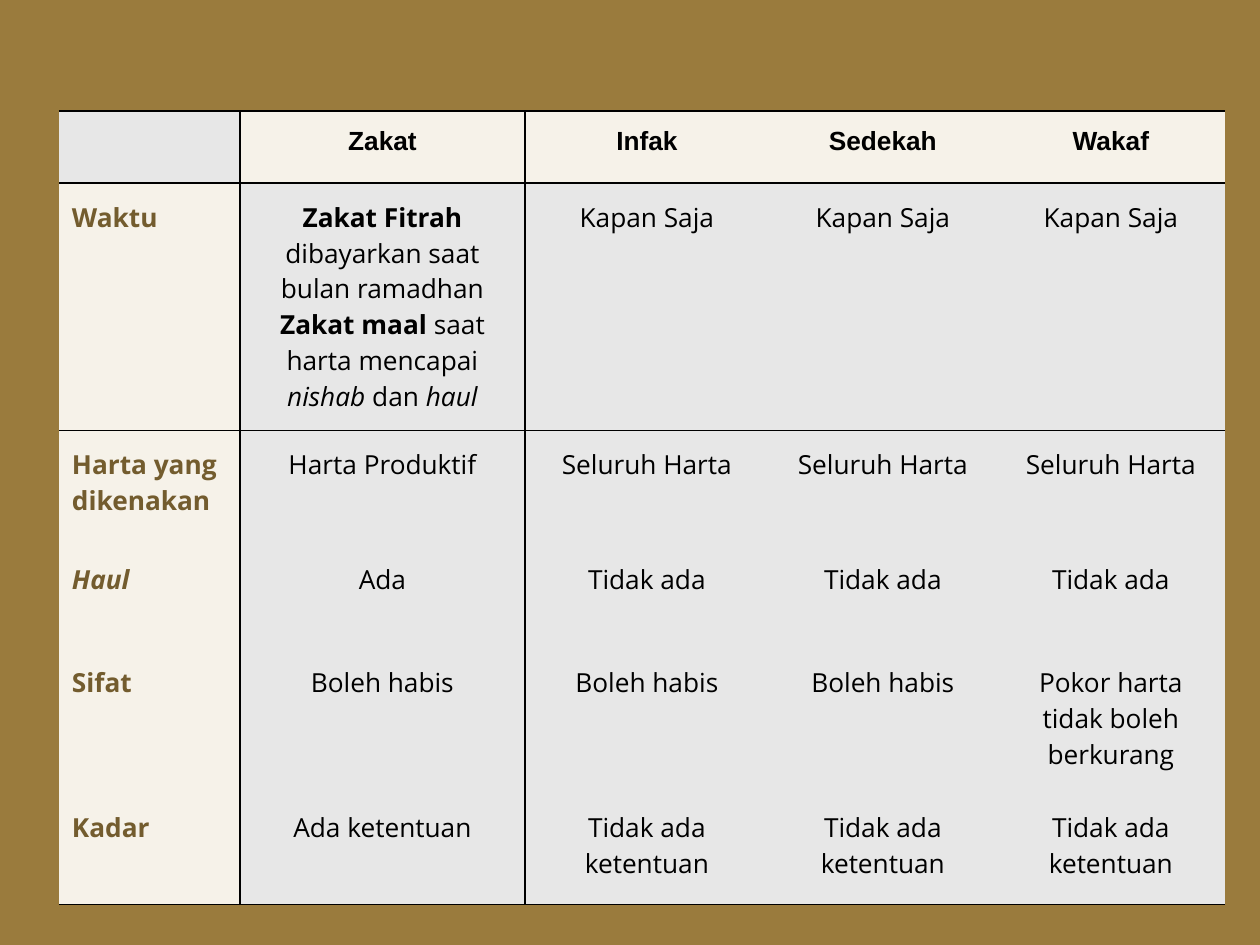
from dataclasses import dataclass
import lxml.etree
import pptx
import pptx.dml.color
import pptx.enum.text
import pptx.oxml
import pptx.oxml.ns
import pptx.util


@dataclass(frozen=True)
class Theme:
    background: str = "9A7B3D"
    cream: str = "F6F2E9"
    grey: str = "E7E7E7"
    brown: str = "735C2E"
    black: str = "000000"
    head_font: str = "Arial"
    body_font: str = "Open Sans"
    size: int = 15
    border: int = 1


@dataclass(frozen=True)
class Run:
    text: str
    bold: bool = False
    italic: bool = False


@dataclass(frozen=True)
class Row:
    height: int
    label: Run
    cells: tuple


THEME = Theme()
LEFT, TOP, WIDTH, HEIGHT = 59, 111, 1166, 769
COLUMNS = (181, 285, 244, 228, 228)
WAKTU_ZAKAT = (
    (Run("Zakat Fitrah ", bold=True), Run("dibayarkan saat bulan ramadhan")),
    (Run("Zakat maal ", bold=True), Run("saat harta mencapai "),
     Run("nishab ", italic=True), Run("dan "), Run("haul", italic=True)),
)


def plain(*texts: str, bold: bool = False) -> tuple:
    return tuple(((Run(text, bold),),) for text in texts)


ROWS = (
    Row(72, Run(""), plain("Zakat", "Infak", "Sedekah", "Wakaf", bold=True)),
    Row(145, Run("Waktu", bold=True), (WAKTU_ZAKAT, *plain(*["Kapan Saja"] * 3))),
    Row(115, Run("Harta yang dikenakan", bold=True),
        plain("Harta Produktif", *["Seluruh Harta"] * 3)),
    Row(103, Run("Haul", bold=True, italic=True), plain("Ada", *["Tidak ada"] * 3)),
    Row(145, Run("Sifat", bold=True),
        plain(*["Boleh habis"] * 3, "Pokor harta tidak boleh berkurang")),
    Row(111, Run("Kadar", bold=True),
        plain("Ada ketentuan", *["Tidak ada ketentuan"] * 3)),
)
RULED_ROWS = (0, 1, 2, len(ROWS))
RULED_COLUMNS = (1, 2)


def px(n: int) -> pptx.util.Emu:
    return pptx.util.Emu(round(n * 914400 / 126))


def rgb(color: str) -> pptx.dml.color.RGBColor:
    return pptx.dml.color.RGBColor.from_string(color)


def write(tf, paragraphs: tuple, *, font: str, color: str, centred: bool) -> None:
    align = pptx.enum.text.PP_ALIGN
    for i, runs in enumerate(paragraphs):
        p = tf.paragraphs[0] if i == 0 else tf.add_paragraph()
        p.alignment = align.CENTER if centred else align.LEFT
        for run in runs:
            r = p.add_run()
            r.text = run.text
            r.font.name = font
            r.font.size = pptx.util.Pt(THEME.size)
            r.font.bold = run.bold
            r.font.italic = run.italic
            r.font.color.rgb = rgb(color)


def set_borders(cell, row: int, col: int) -> None:
    sides = {
        "L": col in RULED_COLUMNS,
        "R": col + 1 in RULED_COLUMNS,
        "T": row in RULED_ROWS,
        "B": row + 1 in RULED_ROWS,
    }
    tcPr = cell._tc.get_or_add_tcPr()
    qn = pptx.oxml.ns.qn
    for i, (side, ruled) in enumerate(sides.items()):
        ln = pptx.oxml.parse_xml(f'<a:ln{side} {pptx.oxml.ns.nsdecls("a")}/>')
        if ruled:
            ln.set("w", str(pptx.util.Pt(THEME.border)))
            fill = lxml.etree.SubElement(ln, qn("a:solidFill"))
            lxml.etree.SubElement(fill, qn("a:srgbClr"), val=THEME.black)
        else:
            lxml.etree.SubElement(ln, qn("a:noFill"))
        tcPr.insert(i, ln)


def draw_cell(cell, row: int, col: int, paragraphs: tuple) -> None:
    cell.margin_left = cell.margin_right = px(13)
    cell.margin_top = cell.margin_bottom = px(16)
    cell.fill.solid()
    heading = (row == 0) != (col == 0)
    cell.fill.fore_color.rgb = rgb(THEME.cream if heading else THEME.grey)
    set_borders(cell, row, col)
    if row or col:
        write(cell.text_frame, paragraphs,
              font=THEME.body_font if row else THEME.head_font,
              color=THEME.black if col else THEME.brown,
              centred=col > 0)


def draw_table(s) -> None:
    sp = s.shapes.add_table(len(ROWS), len(COLUMNS),
                            px(LEFT), px(TOP), px(WIDTH), px(HEIGHT))
    table = sp.table
    table.first_row = table.horz_banding = False
    for column, width in zip(table.columns, COLUMNS):
        column.width = px(width)
    for i, row in enumerate(ROWS):
        table.rows[i].height = px(row.height)
        for j, paragraphs in enumerate((((row.label,),), *row.cells)):
            draw_cell(table.cell(i, j), i, j, paragraphs)
    sp.height = px(HEIGHT)


def main() -> None:
    prs = pptx.Presentation()
    prs.slide_width, prs.slide_height = px(1260), px(945)
    s = prs.slides.add_slide(prs.slide_layouts[6])
    s.background.fill.solid()
    s.background.fill.fore_color.rgb = rgb(THEME.background)
    draw_table(s)
    prs.save("out.pptx")


if __name__ == "__main__":
    main()
